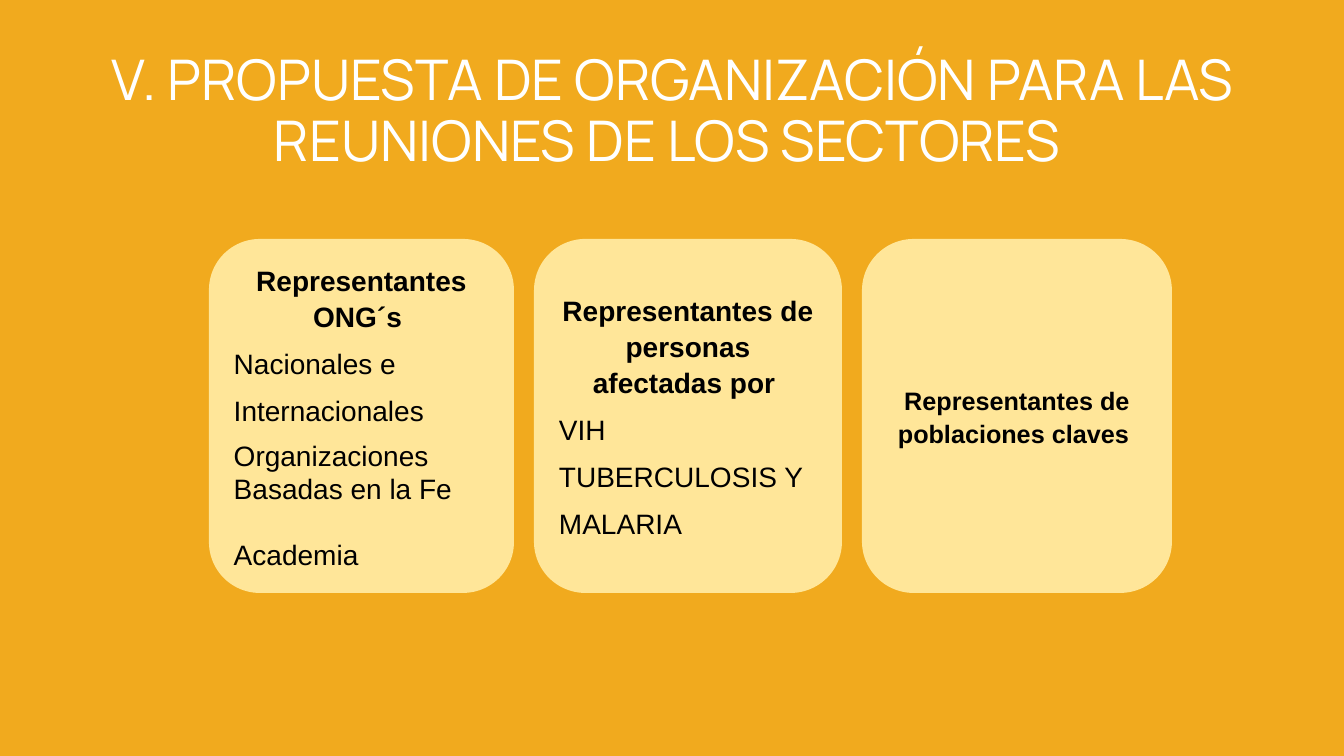
"""Build the slide on how the sector meetings are organised."""
from pptx import Presentation
from pptx.dml.color import RGBColor
from pptx.enum.shapes import MSO_SHAPE as Shape
from pptx.enum.text import MSO_ANCHOR as Anchor, PP_ALIGN as Align
from pptx.util import Emu, Pt

TITLE = "V. PROPUESTA DE ORGANIZACIÓN PARA LAS REUNIONES DE LOS SECTORES "
SPACED = {"line": 1.07, "after": 8}
SECTORS = [
    {"width": 305, "size": 20, "heading": "Representantes ONG´s ",
     "members": [("Nacionales e", SPACED), ("Internacionales", SPACED),
                 ("Organizaciones Basadas en la Fe", {}),
                 ("Academia", {"before": 23})]},
    {"width": 308, "size": 20,
     "heading": "Representantes de personas afectadas por ",
     "members": [("VIH", SPACED), ("TUBERCULOSIS Y", SPACED),
                 ("MALARIA", SPACED)]},
    {"width": 310, "size": 18,
     "heading": "Representantes de poblaciones claves ", "members": []},
]
ORANGE, CREAM, WHITE, BLACK = "F1AA1E", "FFE699", "FFFFFF", "000000"
WIDTH, HEIGHT = 1344, 756
CARD_LEFT, CARD_TOP, CARD_HEIGHT, CARD_GAP = 209, 239, 354, 20


def px(length):
    return Emu(round(length * 914400 / 100.8))


def color(code):
    return RGBColor.from_string(code)


def add_panel(slide, kind, left, top, width, height, fill):
    panel = slide.shapes.add_shape(kind, px(left), px(top), px(width), px(height))
    panel.shadow.inherit = False
    panel.fill.solid()
    panel.fill.fore_color.rgb = color(fill)
    panel.line.fill.background()
    return panel


def write(paragraph, words, size, font="Arial", ink=BLACK, bold=False,
          align=Align.LEFT, line=1.0, before=0, after=0):
    paragraph.alignment = align
    paragraph.line_spacing = line
    paragraph.space_before, paragraph.space_after = Pt(before), Pt(after)
    run = paragraph.add_run()
    run.text = words
    run.font.name, run.font.size, run.font.bold = font, Pt(size), bold
    run.font.color.rgb = color(ink)


def main():
    deck = Presentation()
    deck.slide_width, deck.slide_height = px(WIDTH), px(HEIGHT)
    slide = deck.slides.add_slide(deck.slide_layouts[6])
    backdrop = add_panel(slide, Shape.RECTANGLE, 0, 0, WIDTH, HEIGHT, ORANGE)
    backdrop.line.color.rgb = color(ORANGE)
    backdrop.line.width = Pt(1)

    title = slide.shapes.add_textbox(px(93), px(40), px(1159), px(146)).text_frame
    title.word_wrap = True
    title.vertical_anchor = Anchor.MIDDLE
    write(title.paragraphs[0], TITLE, 40, "Manrope", WHITE,
          align=Align.CENTER, line=0.9)

    left = CARD_LEFT
    for sector in SECTORS:
        card = add_panel(slide, Shape.ROUNDED_RECTANGLE, left, CARD_TOP,
                         sector["width"], CARD_HEIGHT, CREAM).text_frame
        card.word_wrap = True
        card.vertical_anchor = Anchor.MIDDLE
        write(card.paragraphs[0], sector["heading"], sector["size"],
              bold=True, align=Align.CENTER, **SPACED)
        for member, spacing in sector["members"]:
            write(card.add_paragraph(), member, sector["size"], **spacing)
        left += sector["width"] + CARD_GAP

    deck.save("out.pptx")


if __name__ == "__main__":
    main()
